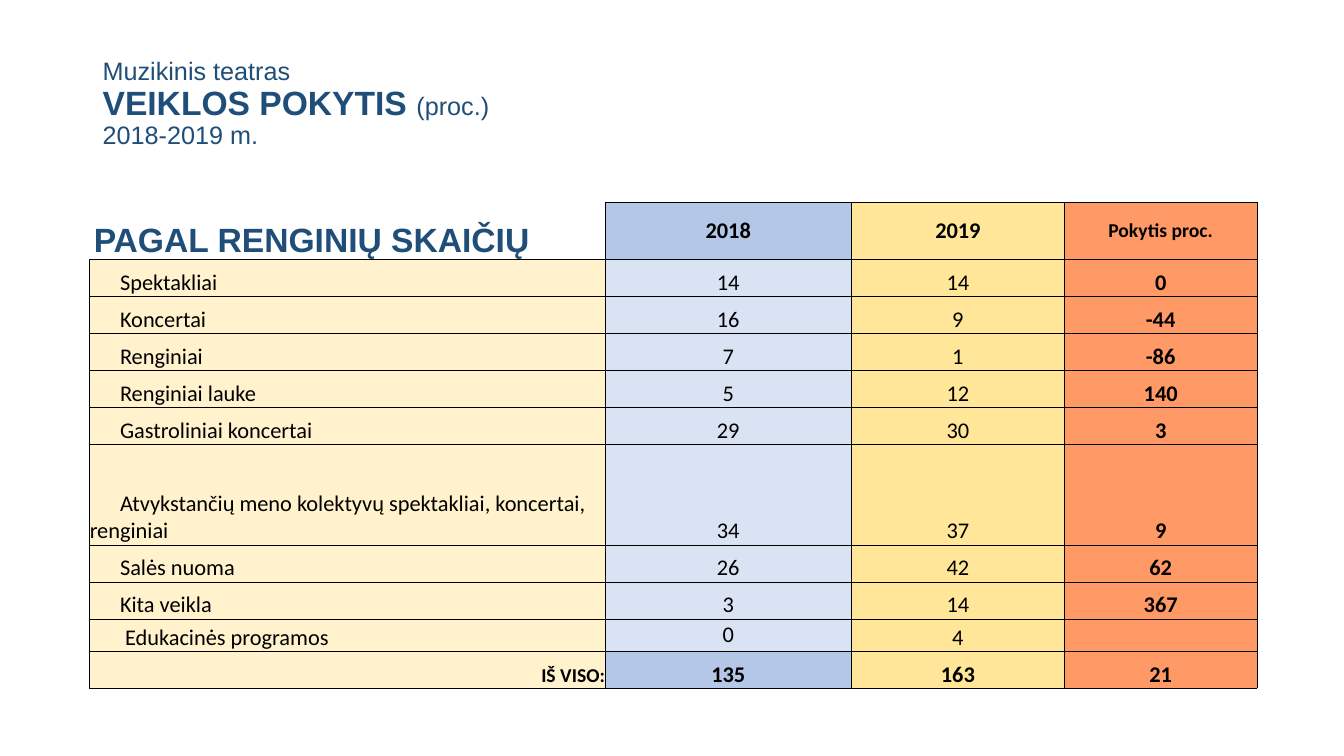
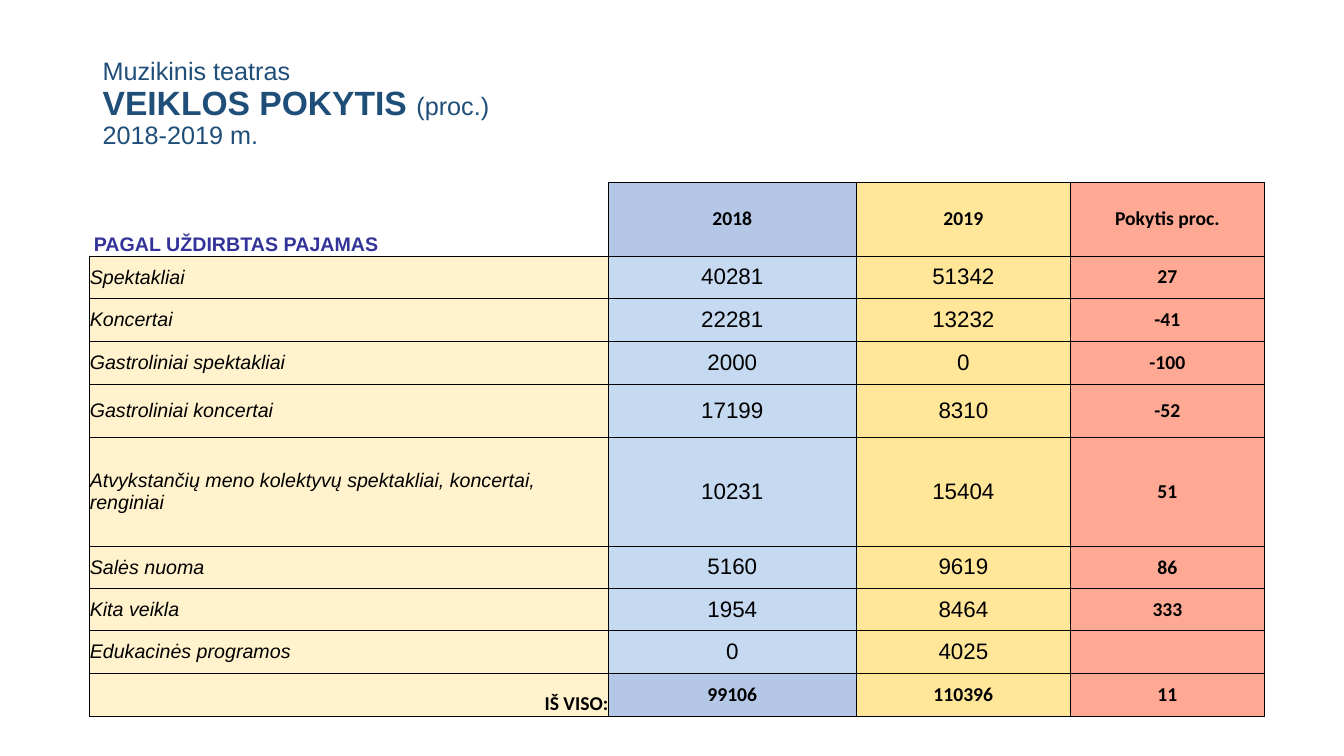
from dataclasses import dataclass, field

from lxml.etree import SubElement
from pptx import Presentation
from pptx.dml.color import RGBColor
from pptx.enum.text import MSO_ANCHOR, PP_ALIGN
from pptx.oxml.ns import qn
from pptx.util import Inches, Pt


@dataclass(frozen=True)
class Theme:
    width: float = 13.33
    height: float = 7.5
    title_font: str = "Arial"
    table_font: str = "Calibri"
    title: str = "1F4E79"
    violet: str = "333399"
    ink: str = "000000"
    header: str = "B4C7E7"
    pale_blue: str = "DAE3F3"
    sky: str = "C5D9F1"
    yellow: str = "FFE699"
    cream: str = "FFF2CC"
    orange: str = "FF9966"
    salmon: str = "FFA893"
    large: int = 24
    medium: int = 18
    body: int = 16
    small: int = 14
    border: float = 0.5


THEME = Theme()
BLANK_LAYOUT = 6
LEFT = 6.68
COLUMN_SHARES = (44.15, 21.1, 18.25, 16.5)
HEADERS = ("2018", "2019", "Pokytis proc.")
TOTAL_LABEL = "IŠ VISO:"
SIDES = ("L", "R", "T", "B")
INDENT = 0.3


@dataclass
class ChangeTable:
    heading: str
    heading_size: int
    heading_color: str
    top: float
    width: float
    row_heights: tuple
    rows: tuple
    value_fill: str
    change_fill: str
    body_font: str
    strong_size: int
    anchor: MSO_ANCHOR
    italic_labels: bool = False
    indent: float = 0
    exceptions: dict = field(default_factory=dict)


EVENTS = ChangeTable(
    heading="PAGAL RENGINIŲ SKAIČIŲ",
    heading_size=THEME.large,
    heading_color=THEME.title,
    top=26.8,
    width=86.85,
    row_heights=(7.5, *[4.9] * 5, 13.3, 4.9, 4.9, 4.25, 4.9),
    rows=(
        ("Spektakliai", "14", "14", "0"),
        ("Koncertai", "16", "9", "-44"),
        ("Renginiai", "7", "1", "-86"),
        ("Renginiai lauke", "5", "12", "140"),
        ("Gastroliniai koncertai", "29", "30", "3"),
        ("Atvykstančių meno kolektyvų spektakliai, koncertai, renginiai", "34", "37", "9"),
        ("Salės nuoma", "26", "42", "62"),
        ("Kita veikla", "3", "14", "367"),
        ("Edukacinės programos", "0", "4", ""),
        (TOTAL_LABEL, "135", "163", "21"),
    ),
    value_fill=THEME.pale_blue,
    change_fill=THEME.orange,
    body_font=THEME.table_font,
    strong_size=THEME.body,
    anchor=MSO_ANCHOR.BOTTOM,
    indent=INDENT,
    exceptions={
        (9, 0): {"indent": INDENT + 0.05},
        (9, 1): {"anchor": MSO_ANCHOR.MIDDLE},
    },
)

INCOME = ChangeTable(
    heading="PAGAL UŽDIRBTAS PAJAMAS",
    heading_size=THEME.small,
    heading_color=THEME.violet,
    top=24.1,
    width=87.4,
    row_heights=(9.75, *[5.65] * 3, 7, 14.5, 5.5, *[5.65] * 3),
    rows=(
        ("Spektakliai", "40281", "51342", "27"),
        ("Koncertai", "22281", "13232", "-41"),
        ("Gastroliniai spektakliai", "2000", "0", "-100"),
        ("Gastroliniai koncertai", "17199", "8310", "-52"),
        ("Atvykstančių meno kolektyvų spektakliai, koncertai, renginiai", "10231", "15404", "51"),
        ("Salės nuoma", "5160", "9619", "86"),
        ("Kita veikla", "1954", "8464", "333"),
        ("Edukacinės programos", "0", "4025", ""),
        (TOTAL_LABEL, "99106", "110396", "11"),
    ),
    value_fill=THEME.sky,
    change_fill=THEME.salmon,
    body_font=THEME.title_font,
    strong_size=THEME.small,
    anchor=MSO_ANCHOR.MIDDLE,
    italic_labels=True,
)


def across(percent):
    return Inches(THEME.width * percent / 100)


def down(percent):
    return Inches(THEME.height * percent / 100)


def write_text(paragraph, text, *, size, font, color=THEME.ink, bold=False, italic=False):
    run = paragraph.add_run()
    run.text = text
    run.font.size = Pt(size)
    run.font.name = font
    run.font.bold = bold
    run.font.italic = italic
    run.font.color.rgb = RGBColor.from_string(color)


def add_title(slide):
    box = slide.shapes.add_textbox(across(6.9), down(5.33), across(86.25), down(16.93))
    frame = box.text_frame
    frame.word_wrap = True
    frame.vertical_anchor = MSO_ANCHOR.MIDDLE
    lines = (
        (("Muzikinis teatras", THEME.medium, False),),
        (("VEIKLOS POKYTIS ", THEME.large, True), ("(proc.)", THEME.medium, False)),
        (("2018-2019 m.", THEME.medium, False),),
    )
    for index, line in enumerate(lines):
        paragraph = frame.add_paragraph() if index else frame.paragraphs[0]
        paragraph.line_spacing = 0.9
        for text, size, bold in line:
            write_text(paragraph, text, size=size, bold=bold,
                       font=THEME.title_font, color=THEME.title)


def set_borders(cell, visible):
    properties = cell._tc.get_or_add_tcPr()
    for side in SIDES:
        line = SubElement(properties, qn(f"a:ln{side}"), w=str(Pt(THEME.border)))
        if side in visible:
            fill = SubElement(line, qn("a:solidFill"))
            SubElement(fill, qn("a:srgbClr"), val=THEME.ink)
        else:
            SubElement(line, qn("a:noFill"))


def fill_cell(cell, text, *, fill, anchor, align=PP_ALIGN.CENTER, indent=0,
              margin_left=0, borders=SIDES, **text_format):
    cell.margin_left = Inches(margin_left)
    cell.margin_right = cell.margin_top = cell.margin_bottom = 0
    cell.vertical_anchor = anchor
    set_borders(cell, borders)
    if fill:
        cell.fill.solid()
        cell.fill.fore_color.rgb = RGBColor.from_string(fill)
    else:
        cell.fill.background()
    paragraph = cell.text_frame.paragraphs[0]
    paragraph.alignment = align
    if indent:
        properties = paragraph._p.get_or_add_pPr()
        properties.set("marL", "0")
        properties.set("indent", str(Inches(indent)))
    if text:
        write_text(paragraph, text, **text_format)


def fill_header(table, content):
    fill_cell(table.cell(0, 0), content.heading, fill=None, anchor=MSO_ANCHOR.BOTTOM,
              align=PP_ALIGN.LEFT, margin_left=0.04, borders=("R", "B"), bold=True,
              size=content.heading_size, font=THEME.title_font, color=content.heading_color)
    fills = (THEME.header, THEME.yellow, content.change_fill)
    sizes = (content.strong_size, content.strong_size, THEME.small)
    for column, (text, fill, size) in enumerate(zip(HEADERS, fills, sizes), 1):
        fill_cell(table.cell(0, column), text, fill=fill, anchor=MSO_ANCHOR.MIDDLE,
                  size=size, font=THEME.table_font, bold=True)


def body_formats(content):
    label = dict(fill=THEME.cream, anchor=content.anchor, align=PP_ALIGN.LEFT,
                 indent=content.indent, size=content.strong_size,
                 font=content.body_font, italic=content.italic_labels)
    value = dict(anchor=content.anchor, size=THEME.body, font=content.body_font)
    change = dict(fill=content.change_fill, anchor=content.anchor,
                  size=content.strong_size, font=THEME.table_font, bold=True)
    return (label, {**value, "fill": content.value_fill},
            {**value, "fill": THEME.yellow}, change)


def total_formats(content):
    strong = dict(anchor=content.anchor, size=content.strong_size,
                  font=THEME.table_font, bold=True)
    label = {**strong, "fill": THEME.cream, "anchor": MSO_ANCHOR.BOTTOM,
             "align": PP_ALIGN.RIGHT, "size": THEME.small}
    fills = (THEME.header, THEME.yellow, content.change_fill)
    return (label, *({**strong, "fill": fill} for fill in fills))


def add_change_table(slide, content):
    width, height = across(content.width), down(sum(content.row_heights))
    table = slide.shapes.add_table(len(content.row_heights), len(COLUMN_SHARES),
                                   across(LEFT), down(content.top), width, height).table
    table.first_row = table.horz_banding = False
    for column, share in zip(table.columns, COLUMN_SHARES):
        column.width = across(content.width * share / 100)
    for row, row_height in zip(table.rows, content.row_heights):
        row.height = down(row_height)
    fill_header(table, content)
    for row, texts in enumerate(content.rows, 1):
        is_total = texts[0] == TOTAL_LABEL
        formats = total_formats(content) if is_total else body_formats(content)
        for column, (text, cell_format) in enumerate(zip(texts, formats)):
            exception = content.exceptions.get((row, column), {})
            fill_cell(table.cell(row, column), text, **{**cell_format, **exception})


def main():
    presentation = Presentation()
    presentation.slide_width = across(100)
    presentation.slide_height = down(100)
    for content in (EVENTS, INCOME):
        slide = presentation.slides.add_slide(presentation.slide_layouts[BLANK_LAYOUT])
        add_title(slide)
        add_change_table(slide, content)
    presentation.save("out.pptx")


if __name__ == "__main__":
    main()
